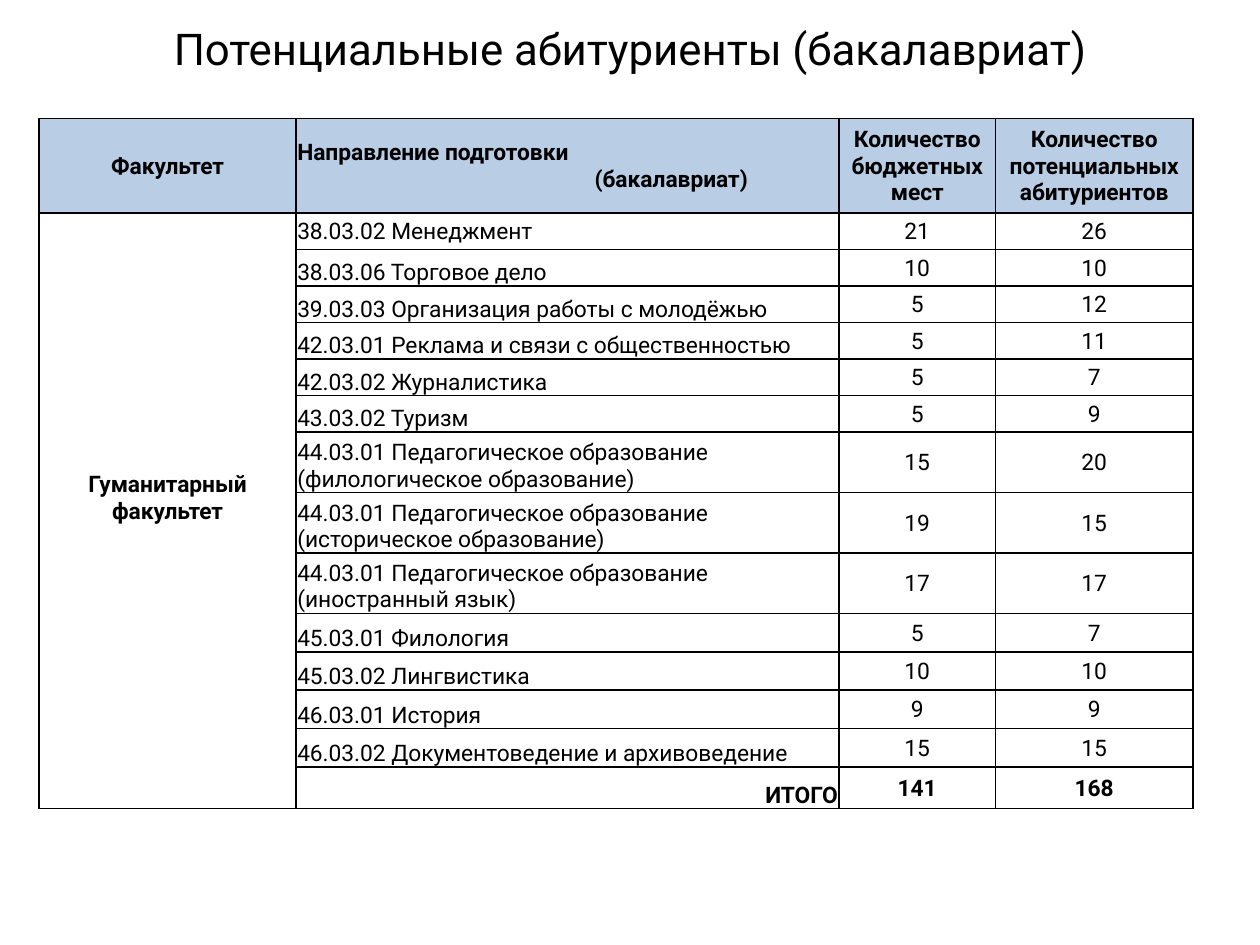
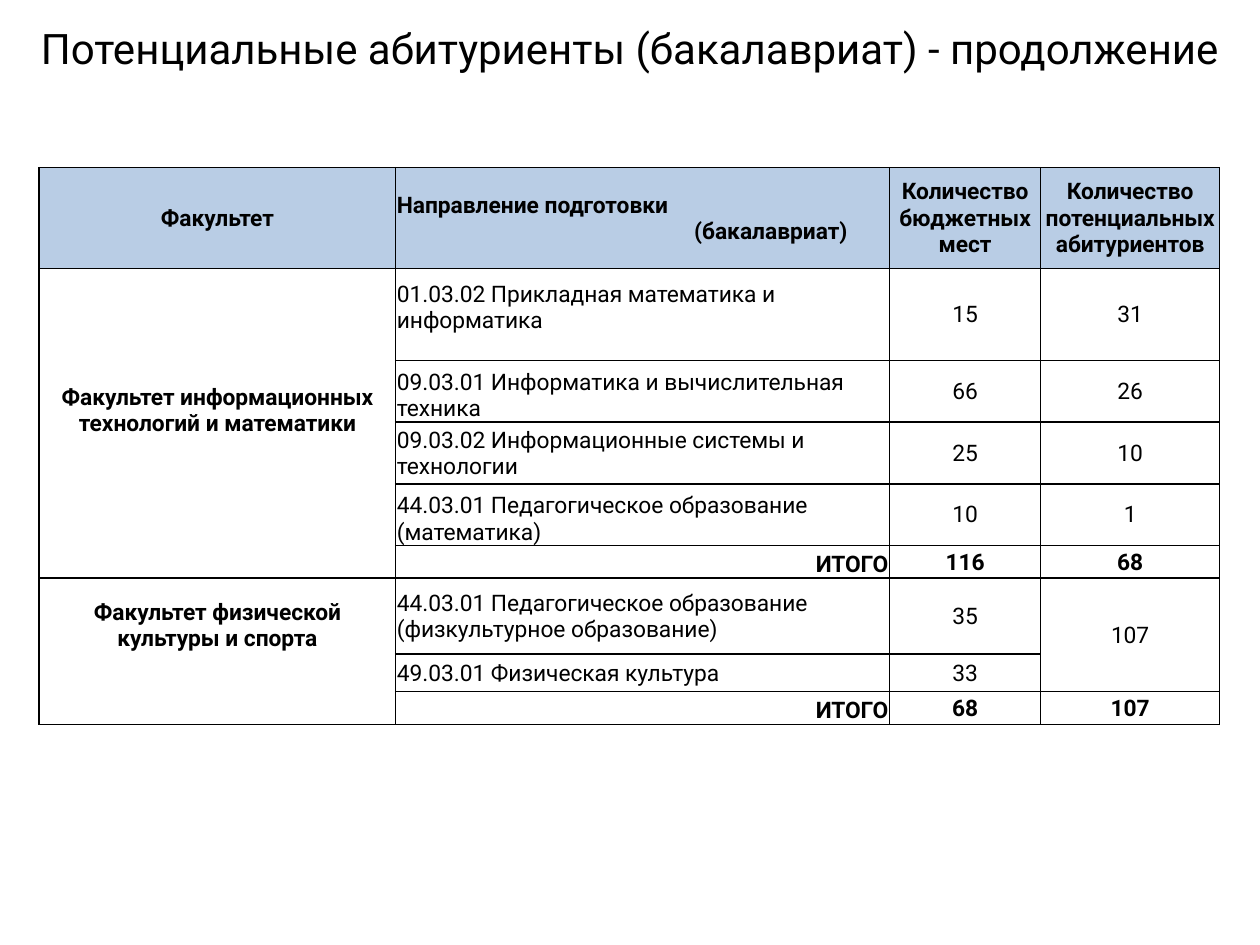
from dataclasses import dataclass
from typing import Optional

from lxml import etree
from pptx import Presentation
from pptx import util as u
from pptx.dml.color import RGBColor
from pptx.enum import text
from pptx.oxml import ns

BLACK = RGBColor(0x00, 0x00, 0x00)
HEADER_BLUE = RGBColor(0xB9, 0xCD, 0xE5)
FONT = "Roboto"
TABLE_SIZE = 13
LINE_GAP = 0.21  # height of one table text line
TABLE_LEFT = 0.31
HEADINGS = ["Факультет", "Направление подготовки\n(бакалавриат)",
            "Количество бюджетных мест", "Количество потенциальных абитуриентов"]
SECOND_LINE_INDENT = 2.36

LEFT, CENTER, RIGHT = text.PP_ALIGN.LEFT, text.PP_ALIGN.CENTER, text.PP_ALIGN.RIGHT
MIDDLE, BOTTOM = text.MSO_ANCHOR.MIDDLE, text.MSO_ANCHOR.BOTTOM


@dataclass
class Program:
    name: str
    seats: int
    applicants: Optional[int]  # None continues the cell above
    height: float
    anchor: int = BOTTOM
    space_below: float = 0
    total: bool = False


@dataclass
class Faculty:
    name: str
    programs: list
    space_below: float = LINE_GAP


def total(seats, applicants, height):
    return Program("ИТОГО", seats, applicants, height, total=True)


HUMANITIES = Faculty("Гуманитарный факультет", [
    Program("38.03.02 Менеджмент", 21, 26, 0.29, MIDDLE),
    Program("38.03.06 Торговое дело", 10, 10, 0.29),
    Program("39.03.03 Организация работы с молодёжью", 5, 12, 0.29),
    Program("42.03.01 Реклама и связи с общественностью", 5, 11, 0.29),
    Program("42.03.02 Журналистика", 5, 7, 0.29),
    Program("43.03.02 Туризм", 5, 9, 0.29),
    Program("44.03.01 Педагогическое образование (филологическое образование)", 15, 20, 0.48),
    Program("44.03.01 Педагогическое образование (историческое образование)", 19, 15, 0.48),
    Program("44.03.01 Педагогическое образование (иностранный язык)", 17, 17, 0.48),
    Program("45.03.01 Филология", 5, 7, 0.305),
    Program("45.03.02 Лингвистика", 10, 10, 0.305),
    Program("46.03.01 История", 9, 9, 0.305),
    Program("46.03.02 Документоведение и архивоведение", 15, 15, 0.305),
    total(141, 168, 0.33),
])
COMPUTING = Faculty("Факультет информационных технологий и математики", [
    Program("01.03.02 Прикладная математика и информатика", 15, 31, 0.73, space_below=LINE_GAP),
    Program("09.03.01 Информатика и вычислительная техника", 66, 26, 0.49),
    Program("09.03.02 Информационные системы и технологии", 25, 10, 0.49, MIDDLE),
    Program("44.03.01 Педагогическое образование (математика)", 10, 1, 0.49),
    total(116, 68, 0.26),
])
SPORT = Faculty("Факультет физической культуры и спорта", [
    Program("44.03.01 Педагогическое образование (физкультурное образование)",
            35, 107, 0.6, MIDDLE),
    Program("49.03.01 Физическая культура", 33, None, 0.3, MIDDLE),
    total(68, 107, 0.26),
], space_below=2 * LINE_GAP)


def style_paragraph(paragraph, size, alignment, bold=False):
    paragraph.alignment = alignment
    paragraph.font.name = FONT
    paragraph.font.size = u.Pt(size)
    paragraph.font.bold = bold
    paragraph.font.color.rgb = BLACK


def add_title(slide, title, size):
    box = slide.shapes.add_textbox(0, 0, u.Inches(10), u.Inches(0.76))
    frame = box.text_frame
    frame.word_wrap = True
    frame.vertical_anchor = MIDDLE
    frame.text = title
    style_paragraph(frame.paragraphs[0], size, CENTER)


def style_cell(cell):
    """Black 1 pt borders, narrow margins, no fill."""
    properties = cell._tc.get_or_add_tcPr()
    for side in ("lnL", "lnR", "lnT", "lnB"):
        line = etree.SubElement(properties, ns.qn(f"a:{side}"), w=str(u.Pt(1)))
        fill = etree.SubElement(line, ns.qn("a:solidFill"))
        etree.SubElement(fill, ns.qn("a:srgbClr"), val=str(BLACK))
    cell.margin_left = cell.margin_right = cell.margin_top = u.Inches(0.01)
    cell.margin_bottom = 0
    cell.fill.background()


def write_cell(cell, content, alignment=CENTER, bold=False, anchor=MIDDLE, space_below=0):
    cell.text = str(content)
    cell.vertical_anchor = anchor
    cell.margin_bottom = u.Inches(space_below)
    for paragraph in cell.text_frame.paragraphs:
        style_paragraph(paragraph, TABLE_SIZE, alignment, bold)


def fill_header(table):
    for column, heading in enumerate(HEADINGS):
        cell = table.cell(0, column)
        write_cell(cell, heading, LEFT if "\n" in heading else CENTER, bold=True)
        cell.fill.solid()
        cell.fill.fore_color.rgb = HEADER_BLUE
        for paragraph in cell.text_frame.paragraphs[1:]:
            properties = paragraph._p.get_or_add_pPr()
            properties.set("marL", str(u.Inches(SECOND_LINE_INDENT)))


def fill_faculty(table, first_row, faculty):
    last_row = first_row + len(faculty.programs) - 1
    table.cell(first_row, 0).merge(table.cell(last_row, 0))
    write_cell(table.cell(first_row, 0), faculty.name, bold=True,
               space_below=faculty.space_below)
    for row, program in enumerate(faculty.programs, first_row):
        write_cell(table.cell(row, 1), program.name, RIGHT if program.total else LEFT,
                   program.total, program.anchor, program.space_below)
        write_cell(table.cell(row, 2), program.seats, bold=program.total)
        if program.applicants is None:
            table.cell(row - 1, 3).merge(table.cell(row, 3))
        else:
            write_cell(table.cell(row, 3), program.applicants, bold=program.total)
    return last_row + 1


def add_faculty_table(slide, top, widths, header_height, faculties):
    heights = [header_height] + [program.height for faculty in faculties
                                 for program in faculty.programs]
    frame = slide.shapes.add_table(len(heights), len(widths), u.Inches(TABLE_LEFT),
                                   u.Inches(top), u.Inches(sum(widths)),
                                   u.Inches(sum(heights)))
    table = frame.table
    table.first_row = table.horz_banding = False
    for column, width in zip(table.columns, widths):
        column.width = u.Inches(width)
    for row, height in zip(table.rows, heights):
        row.height = u.Inches(height)
    for cell in table.iter_cells():
        style_cell(cell)

    fill_header(table)
    next_row = 1
    for faculty in faculties:
        next_row = fill_faculty(table, next_row, faculty)


def add_applicants_slide(presentation, title, title_size, **table_options):
    slide = presentation.slides.add_slide(presentation.slide_layouts[6])
    add_title(slide, title, title_size)
    add_faculty_table(slide, **table_options)


def main():
    presentation = Presentation()
    presentation.slide_width = u.Inches(10)
    presentation.slide_height = u.Inches(7.5)
    title = "Потенциальные абитуриенты (бакалавриат)"
    add_applicants_slide(presentation, title, 25, top=0.94,
                         widths=[2.04, 4.31, 1.24, 1.57],
                         header_height=0.75, faculties=[HUMANITIES])
    add_applicants_slide(presentation, f"{title} - продолжение", 24, top=1.33,
                         widths=[2.83, 3.92, 1.2, 1.42],
                         header_height=0.8, faculties=[COMPUTING, SPORT])
    presentation.save("out.pptx")


if __name__ == "__main__":
    main()
